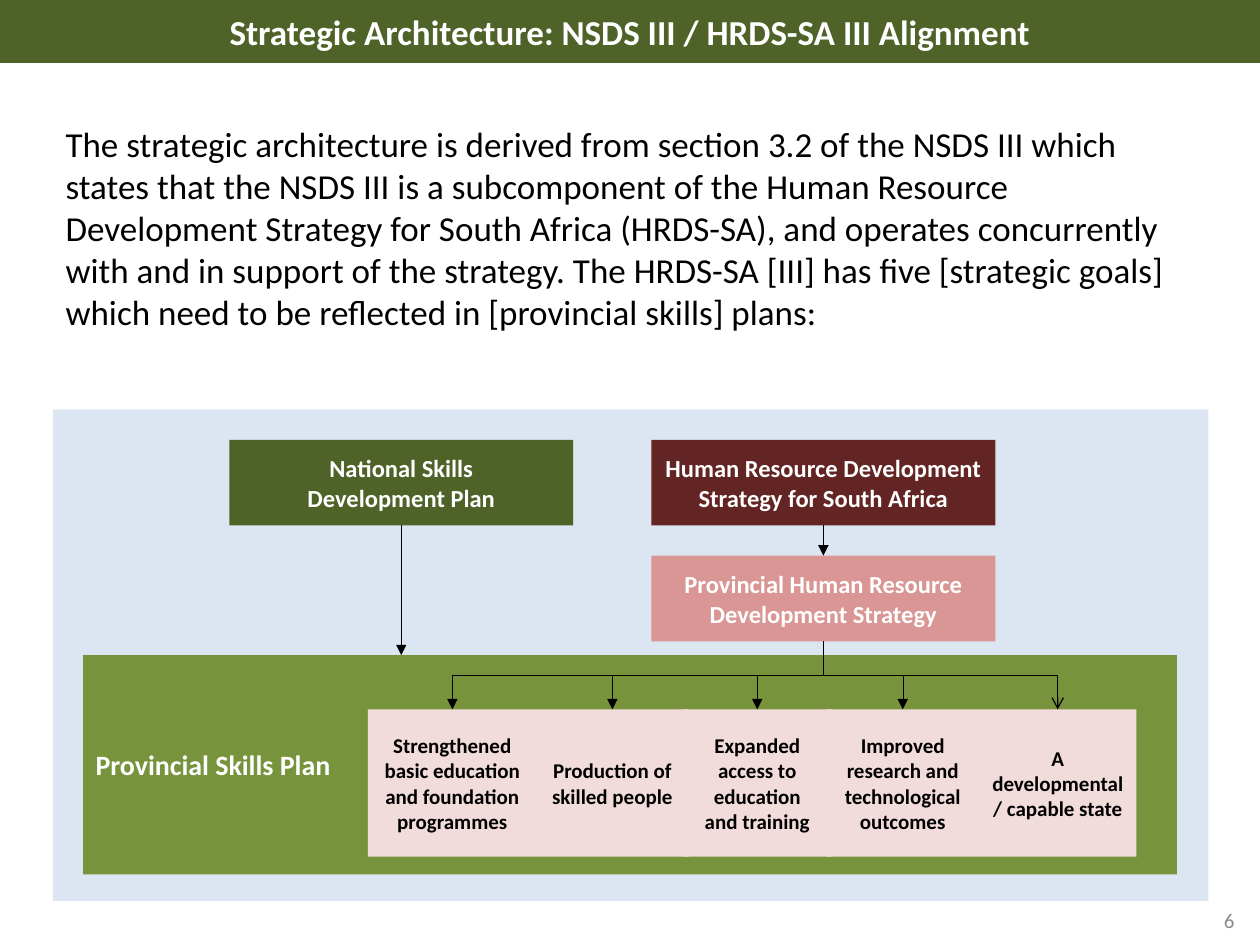
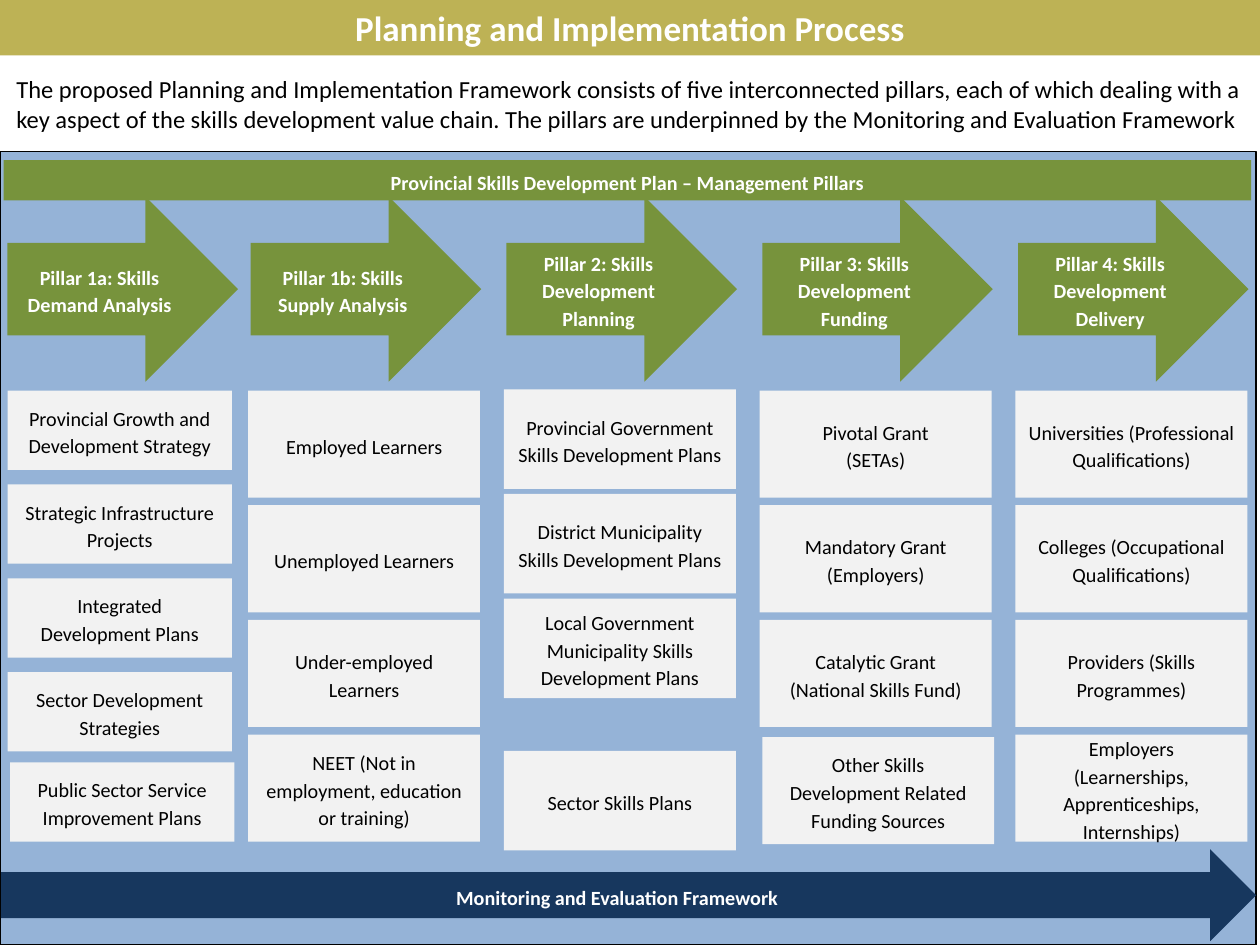
from dataclasses import dataclass

from lxml import etree
from pptx import Presentation
from pptx.dml.color import RGBColor
from pptx.enum.shapes import MSO_CONNECTOR, MSO_SHAPE
from pptx.enum.text import MSO_ANCHOR, MSO_AUTO_SIZE, PP_ALIGN
from pptx.oxml.ns import qn
from pptx.shapes.autoshape import Shape
from pptx.shapes.connector import Connector
from pptx.shapes.shapetree import GroupShapes, SlideShapes
from pptx.slide import Slide
from pptx.util import Inches, Pt

RECT, RIGHT_ARROW = MSO_SHAPE.RECTANGLE, MSO_SHAPE.RIGHT_ARROW
STRAIGHT, ELBOW = MSO_CONNECTOR.STRAIGHT, MSO_CONNECTOR.ELBOW
LEFT, CENTER = PP_ALIGN.LEFT, PP_ALIGN.CENTER
TOP, MIDDLE = MSO_ANCHOR.TOP, MSO_ANCHOR.MIDDLE
NO_AUTOFIT = MSO_AUTO_SIZE.NONE
SIDE_TOP, SIDE_BOTTOM = 0, 2
TITLE_AND_CONTENT = 1


@dataclass(frozen=True)
class Theme:
    font: str = "Calibri"
    black: str = "000000"
    white: str = "FFFFFF"
    grey: str = "8C8C8C"
    dark_green: str = "4F6228"
    green: str = "77933C"
    khaki: str = "BDB255"
    maroon: str = "632523"
    rose: str = "D99694"
    pale_rose: str = "F2DCDB"
    pale_blue: str = "DCE6F2"
    blue: str = "95B3D7"
    navy: str = "17375E"
    card: str = "F2F2F2"
    large: float = 20
    plan: float = 16
    medium: float = 14
    small: float = 12
    pillar: float = 11.5


THEME = Theme()


@dataclass(frozen=True)
class TextStyle:
    size: float
    color: str = THEME.black
    bold: bool = False
    align: PP_ALIGN = CENTER
    anchor: MSO_ANCHOR = MIDDLE
    line_spacing: float = 1.0


TITLE = TextStyle(THEME.large, THEME.white, bold=True)
INTRO = TextStyle(THEME.large, align=LEFT, anchor=TOP)
COMPACT_INTRO = TextStyle(THEME.medium, align=LEFT, anchor=TOP)
PAGE_NUMBER = TextStyle(THEME.small, THEME.grey)
STRATEGY = TextStyle(THEME.medium, THEME.white, bold=True)
PLAN = TextStyle(THEME.plan, THEME.white, bold=True, align=LEFT)
GOAL = TextStyle(THEME.small, bold=True)
PILLAR = TextStyle(THEME.pillar, THEME.white, bold=True, line_spacing=1.15)
CARD = TextStyle(THEME.pillar, line_spacing=1.15)


@dataclass(frozen=True)
class Place:
    left: float
    top: float
    width: float
    height: float

    def in_inches(self) -> tuple:
        return tuple(Inches(v) for v in (self.left, self.top, self.width, self.height))


@dataclass(frozen=True)
class Goal:
    text: str
    left: float
    width: float
    line_width: float = 0.25
    arrowhead: str = "triangle"


@dataclass(frozen=True)
class Pillar:
    title: str
    cards: tuple[str, ...]
    first_top: float = 3.1
    pitch: float = 0.91
    card_height: float = 0.85
    last_shift: tuple[float, float] = (0, 0)


GOALS = (
    Goal("Strengthened basic education and foundation programmes", 2.92, 1.34),
    Goal("Production of skilled people", 4.25, 1.22),
    Goal("Expanded access to education and training", 5.42, 1.18),
    Goal("Improved research and technological outcomes", 6.56, 1.21),
    Goal("A developmental / capable state", 7.77, 1.25, 0.75, "arrow"),
)

PILLARS = (
    Pillar(
        "Pillar 1a: Skills Demand Analysis",
        (
            "Provincial Growth and Development Strategy",
            "Strategic Infrastructure Projects",
            "Integrated Development Plans",
            "Sector Development Strategies",
            "Public Sector Service Improvement Plans",
        ),
        pitch=0.745, card_height=0.63, last_shift=(0.02, -0.03),
    ),
    Pillar(
        "Pillar 1b: Skills Supply Analysis",
        (
            "Employed Learners",
            "Unemployed Learners",
            "Under-employed Learners",
            "NEET (Not in employment, education or training)",
        ),
    ),
    Pillar(
        "Pillar 2: Skills Development Planning",
        (
            "Provincial Government Skills Development Plans",
            "District Municipality Skills Development Plans",
            "Local Government Municipality Skills Development Plans",
            "Sector Skills Plans",
        ),
        first_top=3.09, pitch=0.83, card_height=0.79, last_shift=(0, 0.38),
    ),
    Pillar(
        "Pillar 3: Skills Development Funding",
        (
            "Pivotal Grant\n(SETAs)",
            "Mandatory Grant (Employers)",
            "Catalytic Grant\n(National Skills Fund)",
            "Other Skills Development Related Funding Sources",
        ),
        last_shift=(0.02, 0.02),
    ),
    Pillar(
        "Pillar 4: Skills Development Delivery",
        (
            "Universities (Professional Qualifications)",
            "Colleges (Occupational Qualifications)",
            "Providers (Skills Programmes)",
            "Employers\n(Learnerships, Apprenticeships,\nInternships)",
        ),
    ),
)


def set_all(target: object, formats: dict) -> None:
    for name, value in formats.items():
        setattr(target, name, value)


def write(shape: Shape, text: str, style: TextStyle) -> None:
    frame = shape.text_frame
    frame.text = text
    set_all(frame, {"word_wrap": True, "auto_size": NO_AUTOFIT, "vertical_anchor": style.anchor})
    for paragraph in frame.paragraphs:
        set_all(paragraph, {
            "alignment": style.align, "line_spacing": style.line_spacing, "space_before": Pt(0),
        })
        for run in paragraph.runs:
            set_all(run.font, {"name": THEME.font, "size": Pt(style.size), "bold": style.bold})
            run.font.color.rgb = RGBColor.from_string(style.color)


def paint(shape: Shape, color: str) -> None:
    shape.fill.solid()
    shape.fill.fore_color.rgb = RGBColor.from_string(color)


def move(shape: Shape, place: Place) -> None:
    set_all(shape, dict(zip(("left", "top", "width", "height"), place.in_inches())))


def add_block(shapes: SlideShapes | GroupShapes, place: Place, fill: str, text: str = "",
              style: TextStyle = CARD, kind: MSO_SHAPE = RECT) -> Shape:
    block = shapes.add_shape(kind, *place.in_inches())
    block.shadow.inherit = False
    paint(block, fill)
    block.line.fill.background()
    if text:
        write(block, text, style)
    return block


def add_headed_slide(deck: Presentation, title: str, band_height: float, band_color: str,
                     intro: str, intro_place: Place, intro_style: TextStyle) -> Slide:
    """Add a slide with a full-width title band and an unbulleted introduction."""
    slide = deck.slides.add_slide(deck.slide_layouts[TITLE_AND_CONTENT])
    heading, body = slide.shapes.title, slide.placeholders[1]
    move(heading, Place(0, 0, 10, band_height))
    paint(heading, band_color)
    write(heading, title, TITLE)
    move(body, intro_place)
    write(body, intro, intro_style)
    for paragraph in body.text_frame.paragraphs:
        properties = paragraph._p.get_or_add_pPr()
        properties.set("marL", "0")
        properties.set("indent", "0")
        etree.SubElement(properties, qn("a:buNone"))
    return slide


def finish_arrow(arrow: Connector, width: float, head: str = "triangle") -> None:
    arrow.line.color.rgb = RGBColor.from_string(THEME.black)
    arrow.line.width = Pt(width)
    properties = arrow._element.spPr
    etree.SubElement(properties.find(qn("a:ln")), qn("a:tailEnd"), type=head)
    etree.SubElement(properties, qn("a:effectLst"))


def add_branch(shapes: SlideShapes, source: Shape, target: Shape, goal: Goal) -> None:
    """Draw an elbow that leaves the source downwards and enters the target's top."""
    start_x, start_y = source.left + source.width // 2, source.top + source.height
    end_x = target.left + target.width // 2
    drop, reach = target.top - start_y, abs(end_x - start_x)
    left = (start_x + end_x - drop) // 2
    top = (start_y + target.top - reach) // 2
    branch = shapes.add_connector(ELBOW, left, top, left + drop, top + reach)
    transform = branch._element.spPr.find(qn("a:xfrm"))
    if end_x > start_x:
        transform.set("rot", str(270 * 60000))
        transform.set("flipH", "1")
    else:
        transform.set("rot", str(90 * 60000))
    finish_arrow(branch, goal.line_width, goal.arrowhead)


def build_alignment(deck: Presentation) -> None:
    slide = add_headed_slide(
        deck, "Strategic Architecture: NSDS III / HRDS-SA III Alignment", 0.5, THEME.dark_green,
        "The strategic architecture is derived from section 3.2 of the NSDS III which states that "
        "the NSDS III is a subcomponent of the Human Resource Development Strategy for South "
        "Africa (HRDS-SA), and operates concurrently with and in support of the strategy. The "
        "HRDS-SA [III] has five [strategic goals] which need to be reflected in [provincial "
        "skills] plans:",
        Place(0.42, 0.92, 9.17, 1.92), INTRO)
    shapes = slide.shapes
    write(shapes.add_textbox(*Place(9.5, 7.1, 0.51, 0.4).in_inches()), "6", PAGE_NUMBER)
    add_block(shapes, Place(0.42, 3.25, 9.17, 3.9), THEME.pale_blue)
    skills_plan = add_block(shapes, Place(0.66, 5.2, 8.68, 1.74), THEME.green,
                            "Provincial Skills Plan", PLAN)
    national_plan, national_strategy, provincial_strategy = (
        add_block(shapes, Place(left, top, 2.73, 0.68), fill, text, STRATEGY)
        for left, top, fill, text in (
            (1.82, 3.49, THEME.dark_green, "National Skills\nDevelopment Plan"),
            (5.17, 3.49, THEME.maroon, "Human Resource Development Strategy for South Africa"),
            (5.17, 4.41, THEME.rose, "Provincial Human Resource Development Strategy"),
        )
    )
    for goal in GOALS:
        goal_block = add_block(shapes, Place(goal.left, 5.63, goal.width, 1.17),
                               THEME.pale_rose, goal.text, GOAL)
        add_branch(shapes, provincial_strategy, goal_block, goal)

    cascade = shapes.add_connector(STRAIGHT, 0, 0, 0, 0)
    cascade.begin_connect(national_strategy, SIDE_BOTTOM)
    cascade.end_connect(provincial_strategy, SIDE_TOP)
    finish_arrow(cascade, 0.25)

    plan_center = national_plan.left + national_plan.width // 2
    plan_link = shapes.add_connector(STRAIGHT, plan_center, national_plan.top,
                                     plan_center, skills_plan.top)
    plan_link.begin_connect(national_plan, SIDE_BOTTOM)
    finish_arrow(plan_link, 0.75)


def build_process(deck: Presentation) -> None:
    slide = add_headed_slide(
        deck, "Planning and Implementation Process", 0.44, THEME.khaki,
        "The proposed Planning and Implementation Framework consists of five interconnected "
        "pillars, each of which dealing with a key aspect of the skills development value chain. "
        "The pillars are underpinned by the Monitoring and Evaluation Framework",
        Place(0.03, 0.54, 9.93, 0.57), COMPACT_INTRO)
    framework = slide.shapes.add_group_shape().shapes
    backdrop = add_block(framework, Place(0, 1.2, 9.97, 6.3), THEME.blue)
    backdrop.line.color.rgb = RGBColor.from_string(THEME.black)
    backdrop.line.width = Pt(0.75)
    add_block(framework, Place(0.03, 1.27, 9.9, 0.32), THEME.green,
              "Provincial Skills Development Plan – Management Pillars", PILLAR)
    for column, pillar in enumerate(PILLARS):
        card_left, card_width = (1.97 + 2.03 * (column - 1), 1.84) if column else (0.06, 1.78)
        arrow_left = card_left + 0.02 if column else card_left
        add_block(framework, Place(arrow_left, 1.56, 1.83, 1.47), THEME.green,
                  pillar.title, PILLAR, RIGHT_ARROW)
        for row, text in enumerate(pillar.cards):
            is_last = row == len(pillar.cards) - 1
            shift_x, shift_y = pillar.last_shift if is_last else (0, 0)
            top = pillar.first_top + row * pillar.pitch + shift_y
            add_block(framework, Place(card_left + shift_x, top, card_width, pillar.card_height),
                      THEME.card, text, CARD)
    add_block(framework, Place(0.01, 6.74, 9.96, 0.73), THEME.navy,
              "Monitoring and Evaluation Framework", PILLAR, RIGHT_ARROW)


def main() -> None:
    deck = Presentation()
    deck.slide_width, deck.slide_height = Inches(10), Inches(7.5)
    build_alignment(deck)
    build_process(deck)
    deck.save("out.pptx")


if __name__ == "__main__":
    main()
